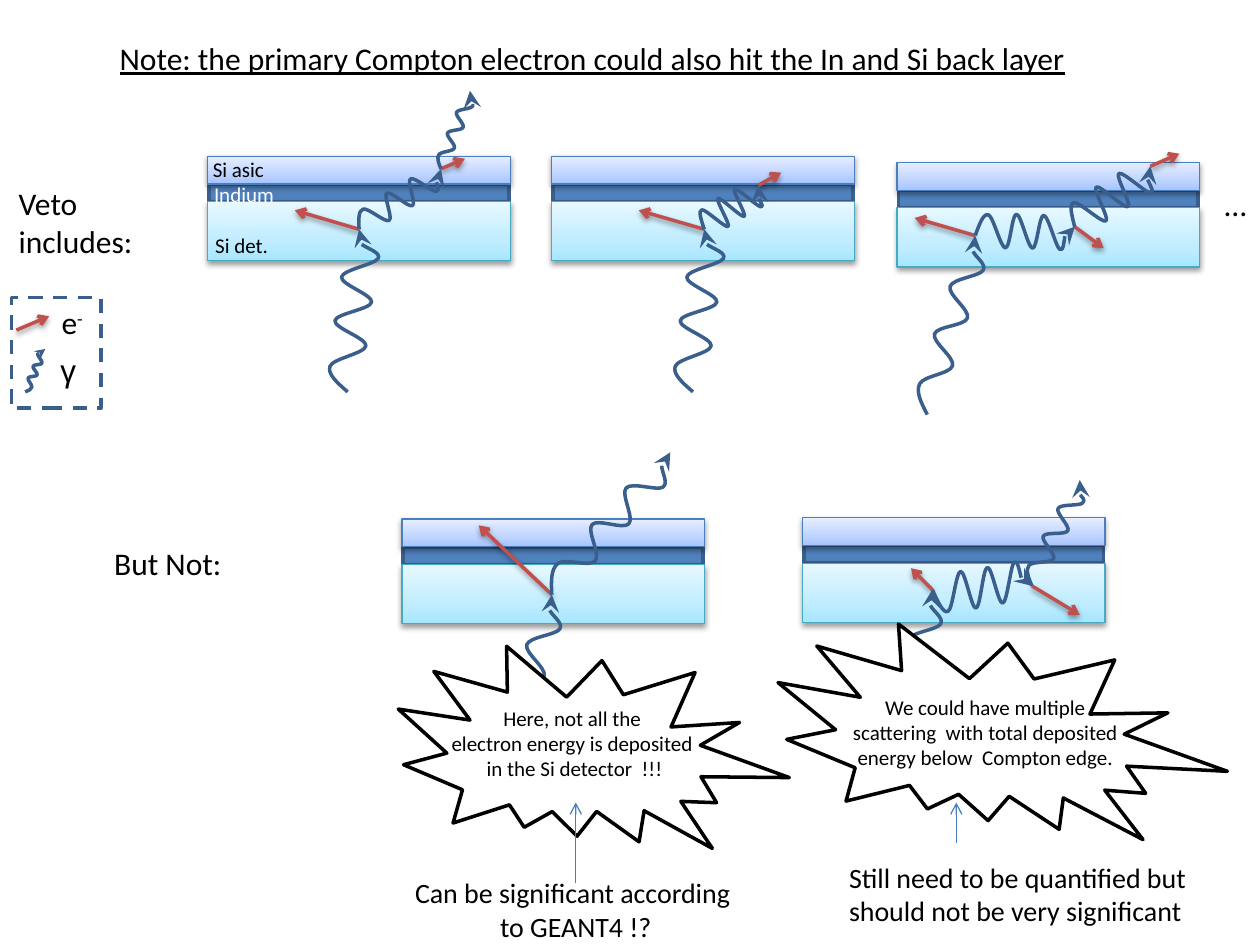
from copy import deepcopy
from math import hypot

from lxml import etree
from pptx import Presentation
from pptx.dml.color import RGBColor
from pptx.enum.dml import MSO_LINE
from pptx.enum.shapes import MSO_CONNECTOR, MSO_SHAPE
from pptx.enum.text import MSO_ANCHOR, MSO_AUTO_SIZE, PP_ALIGN
from pptx.oxml.ns import qn
from pptx.util import Cm, Pt

RECTANGLE, BURST = MSO_SHAPE.RECTANGLE, MSO_SHAPE.EXPLOSION2
STRAIGHT, DASH = MSO_CONNECTOR.STRAIGHT, MSO_LINE.DASH
LEFT, CENTER = PP_ALIGN.LEFT, PP_ALIGN.CENTER
TITLE_ONLY = 5
BLACK, WHITE = "000000", "FFFFFF"
NAVY, RED, BLUE = "3A5F8C", "C0504D", "4B7EBC"

# Content: all positions are in grid units of 2.54 cm
UNIT = 2.54
TITLE = "Note: the primary Compton electron could also hit the In and Si back layer"

# Layers of a detector: offset from its corner and size, fill, line, width, shadow
LAYERS = [
    ((0.01, 0.22, 2.38, 0.14), "4F81BD", NAVY, 2, False),  # indium
    ((0, 0.36, 2.4, 0.47), ["A7E6FF", "C1EDFF", "E7F8FF"], "46AAC5", 0.75, True),  # detector
    ((0, 0, 2.4, 0.22), ["A4C4FF", "BFD4FF", "E6EEFF"], BLUE, 0.75, True),  # asic
]

# Each event: a photon track from vertex to vertex, the wave height of each leg
# (negative swings right first), and the tip of the electron freed at each vertex
EVENTS = [
    {"detector": (1.65, 1.24),
     "track": [(2.76, 3.11), (2.85, 1.82), (3.5, 1.34), (3.73, 0.72)],
     "heights": [0.14, 0.1, 0.05],
     "electrons": [(2.34, 1.67), (3.69, 1.26)]},
    {"detector": (4.38, 1.24),
     "track": [(5.5, 3.11), (5.59, 1.82), (6.02, 1.47)],
     "heights": [0.14, 0.12],
     "electrons": [(5.07, 1.67), (6.2, 1.37)]},
    {"detector": (7.12, 1.29),
     "track": [(7.36, 3.29), (7.74, 1.87), (8.53, 1.8), (9.13, 1.32)],
     "heights": [0.11, 0.14, 0.14],
     "electrons": [(7.26, 1.73), (8.76, 1.97), (9.36, 1.22)]},
    {"detector": (3.19, 4.12),
     "track": [(4, 6.12), (4.38, 4.72), (5.32, 3.59)],
     "heights": [0.11, 0.11],
     "electrons": [(3.8, 4.17)]},
    {"detector": (6.37, 4.11),
     "track": [(7.03, 6.09), (7.4, 4.68), (8.19, 4.65), (8.57, 3.81)],
     "heights": [0.11, -0.16, 0.08],
     "electrons": [(7.23, 4.51), (8.57, 4.88)]},
]
# Turning points of any wave: share of its length, share of its height
WAVE = [(0.15, 1.1), (0.29, -0.85), (0.43, 1), (0.56, -1), (0.7, 0.8), (0.83, -1.2),
        (0.92, -0.1)]

LEGEND_BOX = (0.09, 2.36, 0.71, 0.88)
LEGEND_ELECTRON = (0.13, 2.62), (0.39, 2.51)
LEGEND_PHOTON = (0.2, 3.11), (0.36, 2.77)
BURSTS = [(3.13, 5.1, 3.11, 1.76), (6.13, 4.97, 3.6, 1.76)]
NOTE_ARROWS = [((7.59, 6.69), (7.59, 6.37)), ((4.57, 7.01), (4.57, 6.37))]

# Labels: box, lines, size, and whatever differs from plain left-aligned text
LABELS = [
    ((0.05, 1.41, 1.12, 0.71), ["Veto", "includes:"], 18, {}),
    ((0.8, 4.27, 1.12, 0.4), ["But Not: "], 18, {"align": CENTER}),
    ((9.62, 1.42, 0.38, 0.4), ["…"], 18, {}),
    ((1.61, 1.8, 0.63, 0.3), ["Si det."], 12, {}),
    ((1.6, 1.39, 0.68, 0.3), ["Indium"], 12, {"value": WHITE}),
    ((1.59, 1.19, 0.61, 0.3), ["Si asic"], 12, {}),
    ((3.35, 5.55, 2.42, 0.91),
     ["Here, not all the ", "electron energy is deposited ", "in the Si detector  !!!"],
     12, {"align": CENTER, "wrap": True}),
    ((6.61, 5.46, 2.42, 0.91),
     ["We could have multiple",
      "scattering  with total deposited energy below  Compton edge."],
     12, {"align": CENTER, "wrap": True}),
    ((6.64, 6.78, 2.96, 0.64),
     ["Still need to be quantified but", "should not be very significant"], 16, {}),
    ((3.18, 6.9, 2.78, 0.64), ["Can be significant according ", "to GEANT4 !?"],
     16, {"align": CENTER}),
    ((0.38, 2.74, 0.31, 0.4), ["γ"], 18, {"font": "Arial"}),
    ((0.39, 2.36, 0.38, 0.4), ["e"], 18, {}),
]


def lengths(values):
    return [Cm(value * UNIT) for value in values]


def color(target, value):
    target.rgb = RGBColor.from_string(value)


def set_line(shape, value, width, head=None, head_size="med"):
    color(shape.line.color, value)
    shape.line.width = Pt(width)
    if head:
        etree.SubElement(shape.line._get_or_add_ln(), qn("a:tailEnd"),
                         type=head, w=head_size, len=head_size)


def set_shadow(shape, visible):
    effects = etree.SubElement(shape._element.spPr, qn("a:effectLst"))
    if visible:
        shadow = etree.SubElement(effects, qn("a:outerShdw"), blurRad=str(Pt(3.1)),
                                  dist=str(Pt(1.6)), dir="5400000", rotWithShape="0")
        black = etree.SubElement(shadow, qn("a:srgbClr"), val=BLACK)
        etree.SubElement(black, qn("a:alpha"), val="38000")


def set_gradient(fill, stops):
    fill.gradient()
    fill.gradient_angle = 90
    first = fill.gradient_stops[0]._gs
    first.addnext(deepcopy(first))
    for stop, position, value in zip(fill.gradient_stops, (0, 0.35, 1), stops):
        stop.position = position
        color(stop.color, value)


def add_box(kind, box, fill, line, width, shadow=False):
    shape = shapes.add_shape(kind, *lengths(box))
    if isinstance(fill, list):
        set_gradient(shape.fill, fill)
    elif fill:
        shape.fill.solid()
        color(shape.fill.fore_color, fill)
    else:
        shape.fill.background()
    set_line(shape, line, width)
    set_shadow(shape, shadow)
    return shape


def add_arrow(start, end, value=RED, width=2, shadow=True):
    connector = shapes.add_connector(STRAIGHT, *lengths(start + end))
    set_line(connector, value, width, "arrow")
    set_shadow(connector, shadow)


def wave_knots(start, end, height):
    """Place the turning points of WAVE along and across the line start-end."""
    dx, dy = end[0] - start[0], end[1] - start[1]
    scale = height / hypot(dx, dy)
    turns = [(start[0] + along * dx + across * scale * dy,
              start[1] + along * dy - across * scale * dx) for along, across in WAVE]
    return [start, *turns, end]


def bezier_points(knots):
    """Two control points and a knot per segment, tangents parallel to neighbours."""
    outgoing, incoming = [], []
    for before, knot, after in zip(knots, knots[1:], knots[2:]):
        tangent = [(b - a) / 6 for a, b in zip(before, after)]
        incoming.append([k - t for k, t in zip(knot, tangent)])
        outgoing.append([k + t for k, t in zip(knot, tangent)])
    outgoing.insert(0, [(a + b) / 2 for a, b in zip(knots[0], incoming[0])])
    incoming.append([(a + b) / 2 for a, b in zip(knots[-1], outgoing[-1])])
    return [point for group in zip(outgoing, incoming, knots[1:]) for point in group]


def add_photon(start, end, height, head_size="lg"):
    builder = shapes.build_freeform(*lengths(start))
    points = bezier_points(wave_knots(start, end, height))
    builder.add_line_segments([lengths(point) for point in points], close=False)
    wave = builder.convert_to_shape()
    # Turn every three straight segments into one Bezier segment
    segments = list(wave._element.iter(qn("a:lnTo")))
    for first in range(0, len(segments), 3):
        curve = etree.Element(qn("a:cubicBezTo"))
        segments[first].addprevious(curve)
        for segment in segments[first:first + 3]:
            curve.append(segment[0])
            segment.getparent().remove(segment)
    wave.fill.background()
    set_line(wave, NAVY, 2, "stealth", head_size)
    set_shadow(wave, False)


def write(frame, lines, size, align=LEFT, value=BLACK, font="Calibri", wrap=False):
    frame.word_wrap = wrap
    frame.text = "\n".join(lines)
    for paragraph in frame.paragraphs:
        paragraph.alignment = align
        paragraph.font.size, paragraph.font.name = Pt(size), font
        color(paragraph.font.color, value)


presentation = Presentation()
presentation.slide_width, presentation.slide_height = lengths((10, 7.5))
slide = presentation.slides.add_slide(presentation.slide_layouts[TITLE_ONLY])
shapes = slide.shapes

# Title
title = shapes.title
title.left, title.top, title.width, title.height = lengths((0.85, 0.26, 7.8, 0.4))
write(title.text_frame, [TITLE], 18)
title.text_frame.paragraphs[0].font.underline = True
title.text_frame.auto_size = MSO_AUTO_SIZE.NONE
title.text_frame.vertical_anchor = MSO_ANCHOR.TOP

# Events: detector layers, then electrons and photon legs
for event in EVENTS:
    left, top = event["detector"]
    for (dx, dy, width, height), *style in LAYERS:
        add_box(RECTANGLE, (left + dx, top + dy, width, height), *style)
    track = event["track"]
    for vertex, tip in zip(track[1:], event["electrons"]):
        add_arrow(vertex, tip)
    for start, end, height in zip(track, track[1:], event["heights"]):
        add_photon(start, end, height)

# Remarks
for box in BURSTS:
    add_box(BURST, box, WHITE, BLACK, 2).rotation = 19.2
for start, end in NOTE_ARROWS:
    add_arrow(start, end, BLUE, 0.75, False)

# Legend
add_box(RECTANGLE, LEGEND_BOX, None, NAVY, 2).line.dash_style = DASH
add_arrow(*LEGEND_ELECTRON)
add_photon(*LEGEND_PHOTON, -0.03, "med")

# Labels; the electron symbol comes last and gets its charge
for box, lines, size, options in LABELS:
    label = shapes.add_textbox(*lengths(box))
    write(label.text_frame, lines, size, **options)
    label.text_frame.auto_size = MSO_AUTO_SIZE.SHAPE_TO_FIT_TEXT
charge = label.text_frame.paragraphs[0].add_run()
charge.text = "-"
charge.font._element.set("baseline", "30000")

presentation.save("out.pptx")
